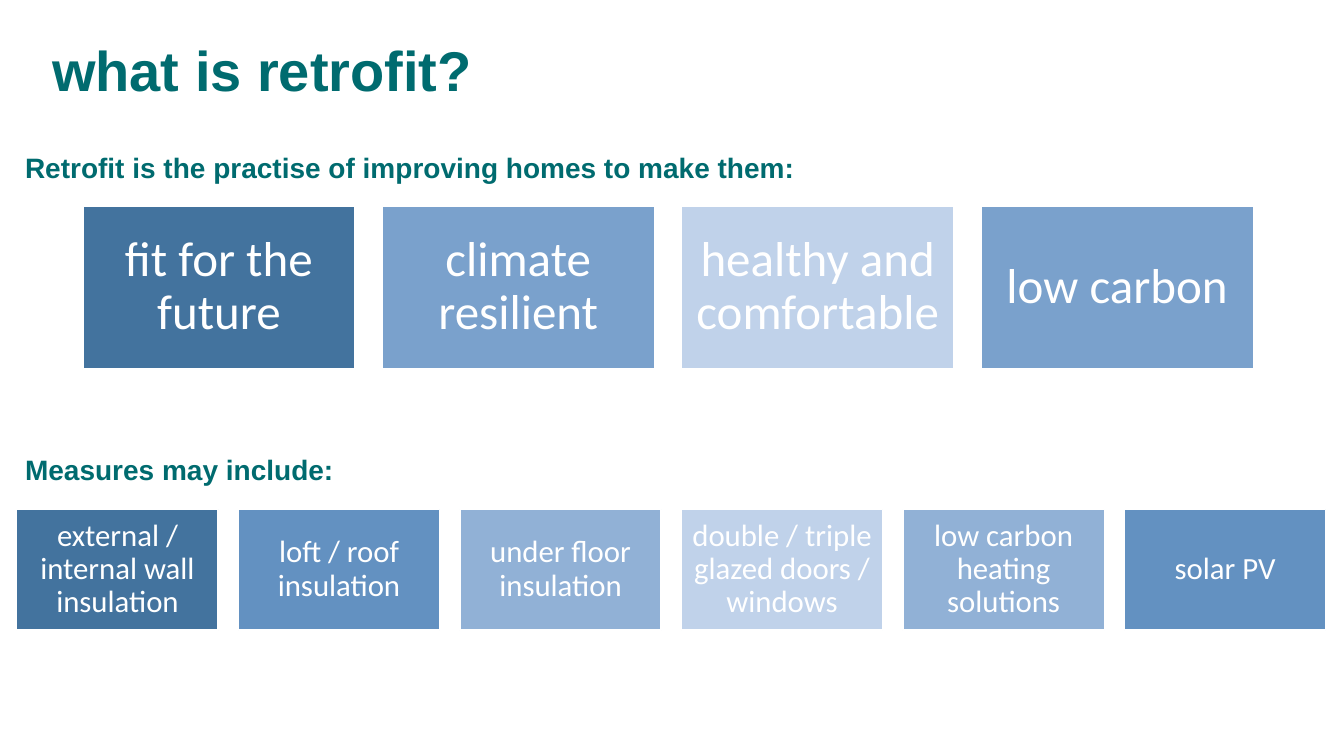
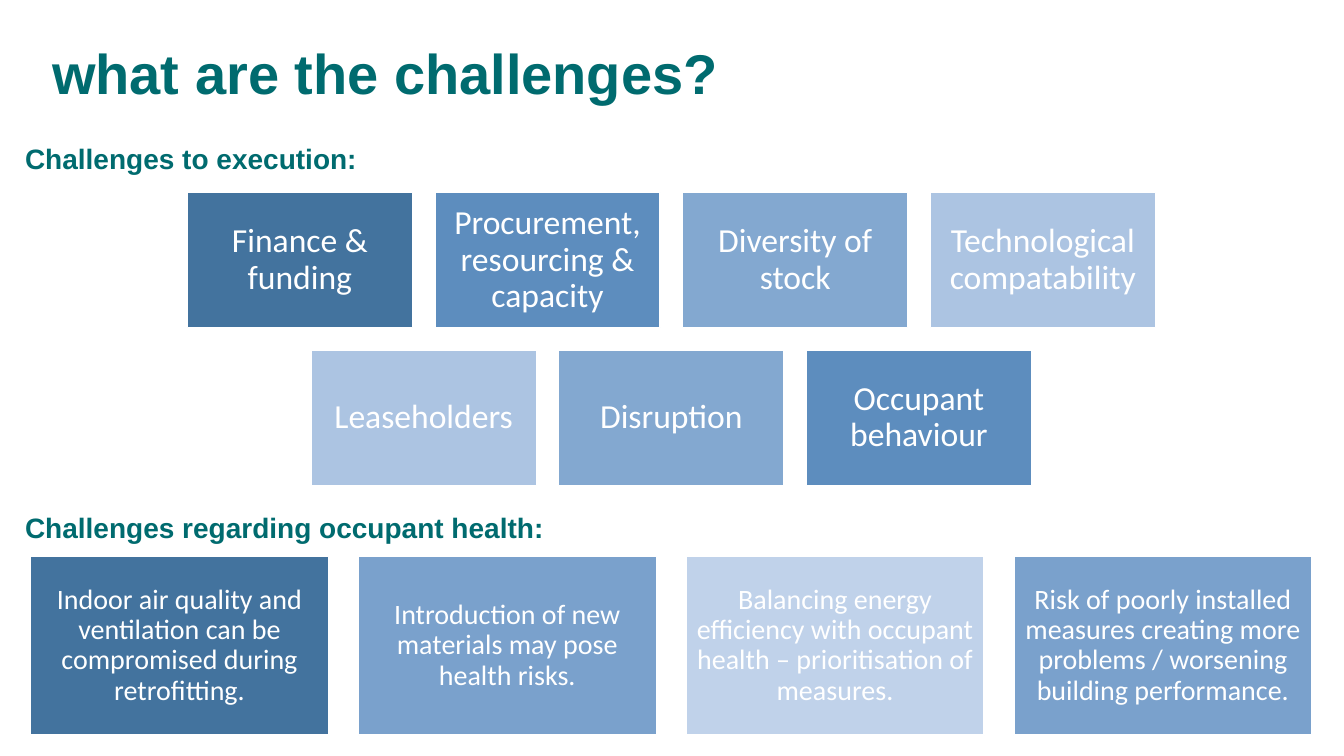
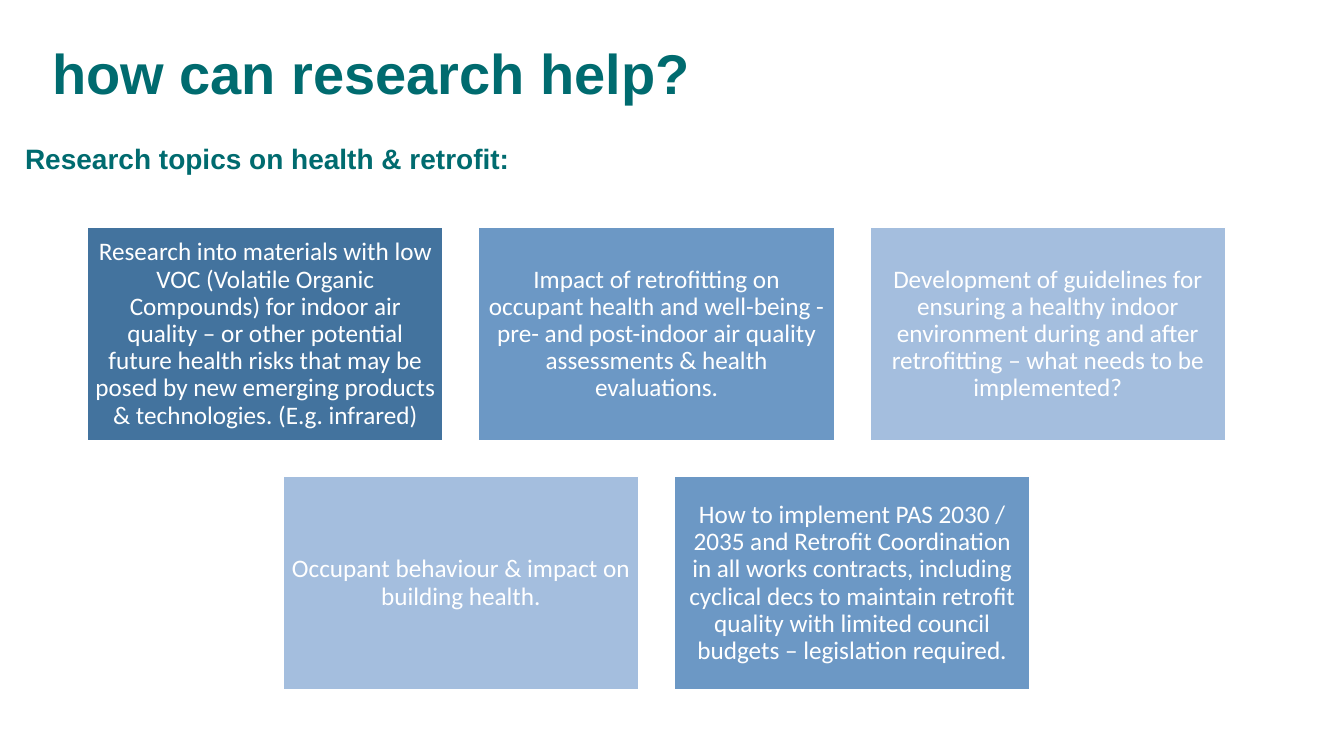
import pptx
import pptx.dml.color
import pptx.enum.shapes
import pptx.enum.text
import pptx.util

Pt = pptx.util.Pt
RGBColor = pptx.dml.color.RGBColor
ALIGN = pptx.enum.text.PP_ALIGN
ANCHOR = pptx.enum.text.MSO_ANCHOR

TEAL = RGBColor(0x00, 0x6B, 0x6F)
WHITE = RGBColor(0xFF, 0xFF, 0xFF)
NAVY = RGBColor(0x43, 0x73, 0x9E)
ROYAL = RGBColor(0x5D, 0x8D, 0xBE)
STEEL = RGBColor(0x63, 0x91, 0xC1)
DENIM = RGBColor(0x6C, 0x98, 0xC5)
CORNFLOWER = RGBColor(0x7A, 0xA1, 0xCC)
SKY = RGBColor(0x83, 0xA8, 0xD0)
POWDER = RGBColor(0x91, 0xB1, 0xD6)
MIST = RGBColor(0xA4, 0xBE, 0xDE)
HAZE = RGBColor(0xAC, 0xC4, 0xE2)
PALE = RGBColor(0xC0, 0xD2, 0xEA)

GAP_RATIO = 0.1
HEIGHT_RATIO = 0.6
INSET_RATIO = 0.3


def write_text(shape, text, size, font="Arial", color=TEAL, bold=False,
               align=ALIGN.LEFT, anchor=ANCHOR.TOP, spacing=1.0, inset=None):
    frame = shape.text_frame
    frame.word_wrap = True
    frame.vertical_anchor = anchor
    if inset is not None:
        frame.margin_left = frame.margin_right = Pt(inset)
        frame.margin_top = frame.margin_bottom = Pt(inset)
    paragraph = frame.paragraphs[0]
    paragraph.alignment = align
    paragraph.line_spacing = spacing
    run = paragraph.add_run()
    run.text = text
    run.font.name = font
    run.font.size = Pt(size)
    run.font.bold = bold
    run.font.color.rgb = color


def add_title_slide(presentation, title, top=21.6):
    slide = presentation.slides.add_slide(presentation.slide_layouts[6])
    shape = slide.shapes.add_textbox(Pt(30.2), Pt(top), Pt(720), Pt(58.3))
    write_text(shape, title, 40, bold=True, anchor=ANCHOR.BOTTOM, spacing=0.9)
    return slide


def add_heading(slide, text, top):
    shape = slide.shapes.add_textbox(Pt(10.8), Pt(top), Pt(709), Pt(31.7))
    write_text(shape, text, 20, bold=True)


def add_tile(slide, text, fill, size, left, top, width, height):
    shape = slide.shapes.add_shape(pptx.enum.shapes.MSO_SHAPE.RECTANGLE,
                                   Pt(left), Pt(top), Pt(width), Pt(height))
    shape.shadow.inherit = False
    shape.fill.solid()
    shape.fill.fore_color.rgb = fill
    shape.line.color.rgb = WHITE
    shape.line.width = Pt(1)
    write_text(shape, text, size, font="Calibri", color=WHITE, align=ALIGN.CENTER,
               anchor=ANCHOR.MIDDLE, spacing=0.9, inset=size * INSET_RATIO)


def add_tile_grid(slide, left, top, width, size, rows):
    columns = max(len(row) for row in rows)
    tile_width = width / (columns + GAP_RATIO * (columns - 1))
    tile_height = tile_width * HEIGHT_RATIO
    gap = tile_width * GAP_RATIO
    for row_index, row in enumerate(rows):
        row_left = left + (columns - len(row)) * (tile_width + gap) / 2
        for column, (text, fill) in enumerate(row):
            add_tile(slide, text, fill, size,
                     row_left + column * (tile_width + gap),
                     top + row_index * (tile_height + gap),
                     tile_width, tile_height)


def build_definition_slide(presentation):
    slide = add_title_slide(presentation, "what is retrofit?", top=19.4)
    add_heading(slide, "Retrofit is the practise of improving homes to make them:", 103.7)
    add_tile_grid(slide, 59.2, 147, 836, 35, [[
        ("fit for the future", NAVY),
        ("climate resilient", CORNFLOWER),
        ("healthy and comfortable", PALE),
        ("low carbon", CORNFLOWER),
    ]])
    add_heading(slide, "Measures may include:", 319.5)
    add_tile_grid(slide, 12, 363.7, 935, 22, [[
        ("external / internal wall insulation", NAVY),
        ("loft / roof insulation", STEEL),
        ("under floor insulation", POWDER),
        ("double / triple glazed doors / windows", PALE),
        ("low carbon heating solutions", POWDER),
        ("solar PV", STEEL),
    ]])


def build_challenges_slide(presentation):
    slide = add_title_slide(presentation, "what are the challenges?")
    add_heading(slide, "Challenges to execution:", 97.2)
    add_tile_grid(slide, 133.8, 137.6, 691.5, 24, [[
        ("Finance & funding", NAVY),
        ("Procurement, resourcing & capacity", ROYAL),
        ("Diversity of stock", SKY),
        ("Technological compatability", HAZE),
    ], [
        ("Leaseholders", HAZE),
        ("Disruption", SKY),
        ("Occupant behaviour", ROYAL),
    ]])
    add_heading(slide, "Challenges regarding occupant health:", 361)
    add_tile_grid(slide, 21.8, 397.4, 915.3, 20, [[
        ("Indoor air quality and ventilation can be compromised during retrofitting.", NAVY),
        ("Introduction of new materials may pose health risks.", CORNFLOWER),
        ("Balancing energy efficiency with occupant health – prioritisation of measures.", PALE),
        ("Risk of poorly installed measures creating more problems / worsening "
         "building performance.", CORNFLOWER),
    ]])


def build_research_slide(presentation):
    slide = add_title_slide(presentation, "how can research help?")
    add_heading(slide, "Research topics on health & retrofit:", 97.2)
    add_tile_grid(slide, 62.5, 162.6, 813, 18, [[
        ("Research into materials with low VOC (Volatile Organic Compounds) for indoor "
         "air quality – or other potential future health risks that may be posed by new "
         "emerging products & technologies. (E.g. infrared)", NAVY),
        ("Impact of retrofitting on occupant health and well-being - pre- and post-indoor "
         "air quality assessments & health evaluations.", DENIM),
        ("Development of guidelines for ensuring a healthy indoor environment during and "
         "after retrofitting – what needs to be implemented?", MIST),
    ], [
        ("Occupant behaviour & impact on building health.", MIST),
        ("How to implement PAS 2030 / 2035 and Retrofit Coordination in all works "
         "contracts, including cyclical decs to maintain retrofit quality with limited "
         "council budgets – legislation required.", DENIM),
    ]])


def main():
    presentation = pptx.Presentation()
    presentation.slide_width = Pt(960)
    presentation.slide_height = Pt(540)
    build_definition_slide(presentation)
    build_challenges_slide(presentation)
    build_research_slide(presentation)
    presentation.save("out.pptx")


if __name__ == "__main__":
    main()
